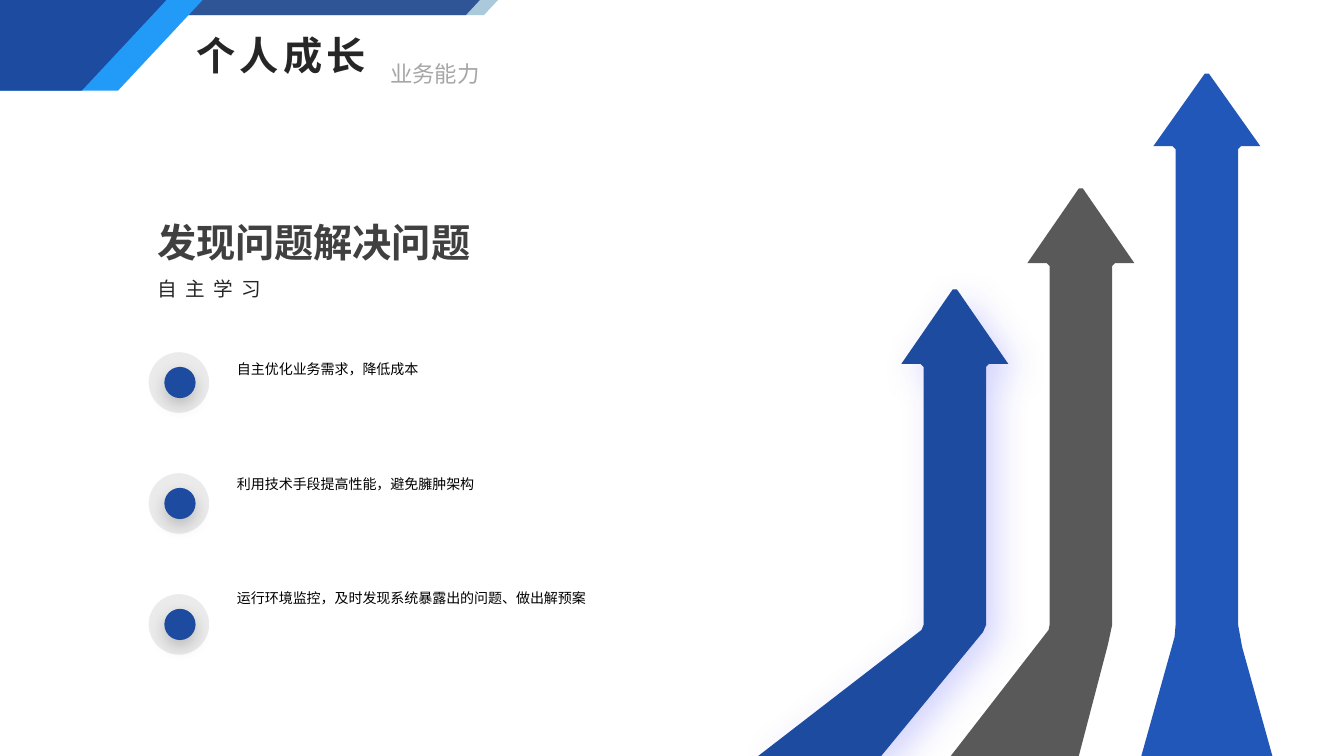
"""Build the personal growth slide with three rising arrows."""
from typing import NamedTuple

from lxml.etree import SubElement
from pptx import Presentation
from pptx.dml.color import RGBColor
from pptx.enum.shapes import MSO_SHAPE as Kind
from pptx.enum.text import MSO_ANCHOR as Anchor, MSO_AUTO_SIZE as Fit, PP_ALIGN as Align
from pptx.oxml.ns import qn
from pptx.util import Inches, Pt

FONT = "Noto Sans CJK SC"
NAVY = "1D4BA0"
Point = tuple[float, float]


class Shade(NamedTuple):
    color: str
    alpha: int
    blur: int
    dist: int
    angle: int


class Label(NamedTuple):
    text: str
    box: tuple[float, float, float, float]
    size: int
    color: str
    bold: bool = False
    track: int = 0


class Arrow(NamedTuple):
    tip: Point
    base: float
    bends: tuple[Point, Point]
    feet: tuple[float, float]
    color: str
    shade: Shade | None = None


TITLE = Label("个人成长", (1.85, 0.26, 1.92, 0.57), 28, "262626", True, 3)
LABELS = [
    Label("业务能力", (3.77, 0.55, 1.09, 0.37), 16, "A6A6A6"),
    Label("发现问题解决问题", (1.46, 2.12, 3.34, 0.57), 28, "404040", True),
    Label("自主学习", (1.46, 2.7, 3.39, 0.34), 14, "262626", False, 6),
]
ITEMS = Label(
    "自主优化业务需求，降低成本\n"
    "利用技术手段提高性能，避免臃肿架构\n"
    "运行环境监控，及时发现系统暴露出的问题、做出解预案",
    (2.25, 3.48, 5.4, 2.66), 10, "000000")
ARROWS = [
    Arrow((11.97, 0.73), 1.45, ((11.65, 6.32), (12.32, 6.42)), (11.32, 12.62), "2157B9"),
    Arrow((10.72, 1.87), 2.61, ((10.4, 6.25), (10.99, 6.39)), (9.43, 10.7), "595959"),
    Arrow((9.47, 2.87), 3.61, ((9.14, 6.25), (9.75, 6.27)), (7.52, 8.74), NAVY,
          Shade("5858FA", 25, 25, 10, 45)),
]
BANDS = [
    ([(0, 0), (2.01, 0), (1.17, 0.9), (0, 0.9)], "229BF8"),
    ([(0, 0), (1.65, 0), (0.81, 0.9), (0, 0.9)], NAVY),
]


def rgb(code: str) -> RGBColor:
    """Turn a hex string into a colour."""
    return RGBColor.from_string(code)


def paint(shape, color: str, shade: Shade | None = None) -> None:
    """Fill a shape without outline, with a shadow if one is given."""
    shape.fill.solid()
    shape.fill.fore_color.rgb = rgb(color)
    shape.line.fill.background()
    shape.shadow.inherit = False
    if shade:
        glow = SubElement(
            shape._element.spPr.find(qn("a:effectLst")), qn("a:outerShdw"),
            blurRad=str(Pt(shade.blur)), dist=str(Pt(shade.dist)),
            dir=str(shade.angle * 60000), algn="ctr", rotWithShape="0")
        tone = SubElement(glow, qn("a:srgbClr"), val=shade.color)
        SubElement(tone, qn("a:alpha"), val=str(shade.alpha * 1000))


def preset(slide, kind: Kind, box: tuple, color: str, shade: Shade | None = None):
    """Add a painted preset shape."""
    shape = slide.shapes.add_shape(kind, *map(Inches, box))
    paint(shape, color, shade)
    return shape


def outline(slide, points: list[Point], color: str, shade: Shade | None = None) -> None:
    """Add a painted polygon."""
    first, *rest = [(Inches(x), Inches(y)) for x, y in points]
    pen = slide.shapes.build_freeform(*first)
    pen.add_line_segments(rest, close=True)
    paint(pen.convert_to_shape(), color, shade)


def arrow(slide, item: Arrow) -> None:
    """Draw one arrow from its left foot over the tip to its right foot."""
    x, top = item.tip
    sides = []
    for sign, bend, foot in zip((-1, 1), item.bends, item.feet):
        rise = [(0.31, 6.2), (0.31, item.base + 0.03), (0.34, item.base),
                (0.53, item.base), (0.02, top)]
        sides.append([(foot, 7.5), bend] + [(x + sign * dx, y) for dx, y in rise])
    left, right = sides
    outline(slide, left + right[::-1], item.color, item.shade)


def write(shape, label: Label, wrap: bool = False) -> list:
    """Place and fill a text shape and return its paragraphs."""
    shape.left, shape.top, shape.width, shape.height = map(Inches, label.box)
    frame = shape.text_frame
    frame.text = label.text
    frame.word_wrap = wrap
    frame.auto_size = Fit.NONE
    frame.vertical_anchor = Anchor.TOP
    for para in frame.paragraphs:
        para.alignment = Align.LEFT
        font = para.font
        font.name, font.size, font.bold = FONT, Pt(label.size), label.bold
        font.color.rgb = rgb(label.color)
        props = para._p.pPr.find(qn("a:defRPr"))
        props.set("spc", str(label.track * 100))
        SubElement(props, qn("a:ea"), typeface=FONT)
    return list(frame.paragraphs)


def header(slide) -> None:
    """Draw the slanted bands at the top left."""
    pale = preset(slide, Kind.PARALLELOGRAM, (1.18, 0, 3.76, 0.15), "1A6D9F")
    tone = pale._element.spPr.find(qn("a:solidFill"))[0]
    SubElement(tone, qn("a:alpha"), val="37000")
    dark = preset(slide, Kind.PARALLELOGRAM, (1, 0, 3.76, 0.15), "2F5597")
    for bar in (pale, dark):
        bar.adjustments[0] = 0.93
    for points, color in BANDS:
        outline(slide, points, color)


def points(slide, body) -> None:
    """Write the list and draw a dot beside each item."""
    for row, para in enumerate(write(body, ITEMS, True)):
        para.line_spacing = 1.3
        para.space_before, para.space_after = Pt(0), Pt(66)
        props = para._p.pPr
        props.set("marL", "0")
        props.set("indent", "0")
        plain = SubElement(props, qn("a:buNone"))
        props.find(qn("a:defRPr")).addprevious(plain)
        top = 3.48 + 1.2 * row
        ring = preset(slide, Kind.OVAL, (1.46, top, 0.63, 0.63), "EBEBEB")
        ring.line.color.rgb = rgb("FFFFFF")
        ring.line.width = Pt(2)
        preset(slide, Kind.OVAL, (1.63, top + 0.16, 0.31, 0.31), NAVY,
               Shade("000000", 20, 12, 5, 90))


def main() -> None:
    """Build and save the deck."""
    deck = Presentation()
    deck.slide_width, deck.slide_height = Inches(13.33), Inches(7.5)
    slide = deck.slides.add_slide(deck.slide_layouts[1])
    header(slide)
    write(slide.shapes.title, TITLE)
    for item in ARROWS:
        arrow(slide, item)
    points(slide, slide.placeholders[1])
    for label in LABELS:
        write(slide.shapes.add_textbox(0, 0, 0, 0), label)
    deck.save("out.pptx")


if __name__ == "__main__":
    main()
